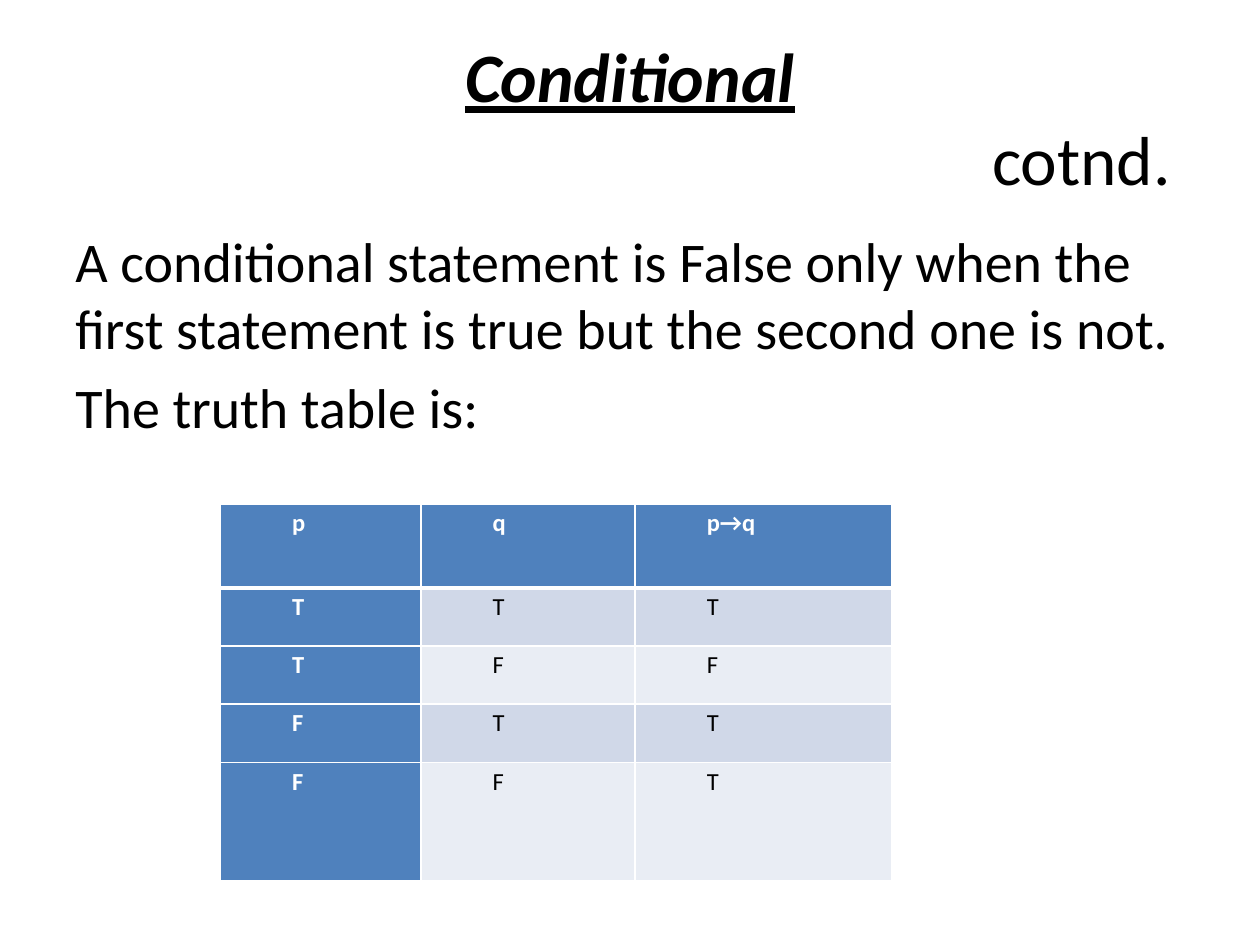
import pptx
import pptx.dml.color
import pptx.enum.text
import pptx.oxml
import pptx.oxml.ns
import pptx.util

Pt = pptx.util.Pt
Align = pptx.enum.text.PP_ALIGN
Anchor = pptx.enum.text.MSO_ANCHOR
COLORS = {"ink": "000000", "white": "FFFFFF", "header": "4F81BD",
          "odd": "D0D8E8", "even": "E9EDF4"}


class SlideBuilder:
    """Hold the style and current slide, and add its elements."""

    font_name = "Calibri"

    def __init__(self, slide):
        self.slide = slide

    def color(self, key):
        return pptx.dml.color.RGBColor.from_string(COLORS[key])

    def style(self, paragraph, size, color="ink", bold=False, indent=0):
        font = paragraph.font
        font.name, font.size, font.bold = self.font_name, Pt(size), bold
        font.color.rgb = self.color(color)
        if indent:
            properties = paragraph._p.get_or_add_pPr()
            properties.set("marL", str(Pt(indent)))
            properties.set("indent", "0")

    def text(self, box, lines, size, anchor=Anchor.TOP, align=Align.LEFT, before=0):
        frame = self.slide.shapes.add_textbox(*map(Pt, box)).text_frame
        frame.word_wrap = True
        frame.vertical_anchor = anchor
        for index, (line, indent) in enumerate(lines):
            paragraph = frame.add_paragraph() if index else frame.paragraphs[0]
            paragraph.text = line
            paragraph.alignment = align
            paragraph.space_before = Pt(before)
            self.style(paragraph, size, indent=indent)
        return frame

    def borders(self, cell, bottom):
        properties = cell._tc.get_or_add_tcPr()
        widths = {"L": 1, "R": 1, "T": 1, "B": bottom}
        for index, (side, width) in enumerate(widths.items()):
            properties.insert(index, pptx.oxml.parse_xml(
                f'<a:ln{side} {pptx.oxml.ns.nsdecls("a")} w="{Pt(width)}">'
                f'<a:solidFill><a:srgbClr val="{COLORS["white"]}"/></a:solidFill>'
                f'</a:ln{side}>'))

    def table(self, left, top, widths, heights, rows):
        table = self.slide.shapes.add_table(
            len(rows), len(widths), Pt(left), Pt(top),
            Pt(sum(widths)), Pt(sum(heights))).table
        for column, width in zip(table.columns, widths):
            column.width = Pt(width)
        for r, (values, height) in enumerate(zip(rows, heights)):
            table.rows[r].height = Pt(height)
            for c, value in enumerate(values):
                heading = r == 0 or c == 0
                band = "odd" if r % 2 else "even"
                cell = table.cell(r, c)
                cell.margin_left = cell.margin_right = Pt(5)
                cell.margin_top = cell.margin_bottom = Pt(0)
                cell.fill.solid()
                cell.fill.fore_color.rgb = self.color("header" if heading else band)
                self.borders(cell, bottom=1 if r else 3)
                paragraph = cell.text_frame.paragraphs[0]
                paragraph.text = value
                paragraph.line_spacing = 1.15
                self.style(paragraph, 14, "white" if heading else "ink", heading, 36)


def main():
    presentation = pptx.Presentation()
    presentation.slide_width, presentation.slide_height = Pt(720), Pt(540)
    builder = SlideBuilder(presentation.slides.add_slide(presentation.slide_layouts[6]))

    title = builder.text((36, 21.6, 648, 90), [("Conditional", 0), ("cotnd.", 516)],
                         39.6, Anchor.MIDDLE, Align.CENTER)
    heading = title.paragraphs[0].font
    heading.bold = heading.italic = heading.underline = True

    builder.text((36, 126, 648, 356.4), [
        ("A conditional statement is False only when the first statement "
         "is true but the second one is not.", 0),
        ("The truth table is:", 0)], 32, before=6.4)

    builder.table(126, 288, [114.5, 122.4, 146.9], [48, 33.2, 33.2, 33.2, 67.5],
                  ["p q p→q".split(), "TTT", "TFF", "FTT", "FFT"])
    presentation.save("out.pptx")


if __name__ == "__main__":
    main()
